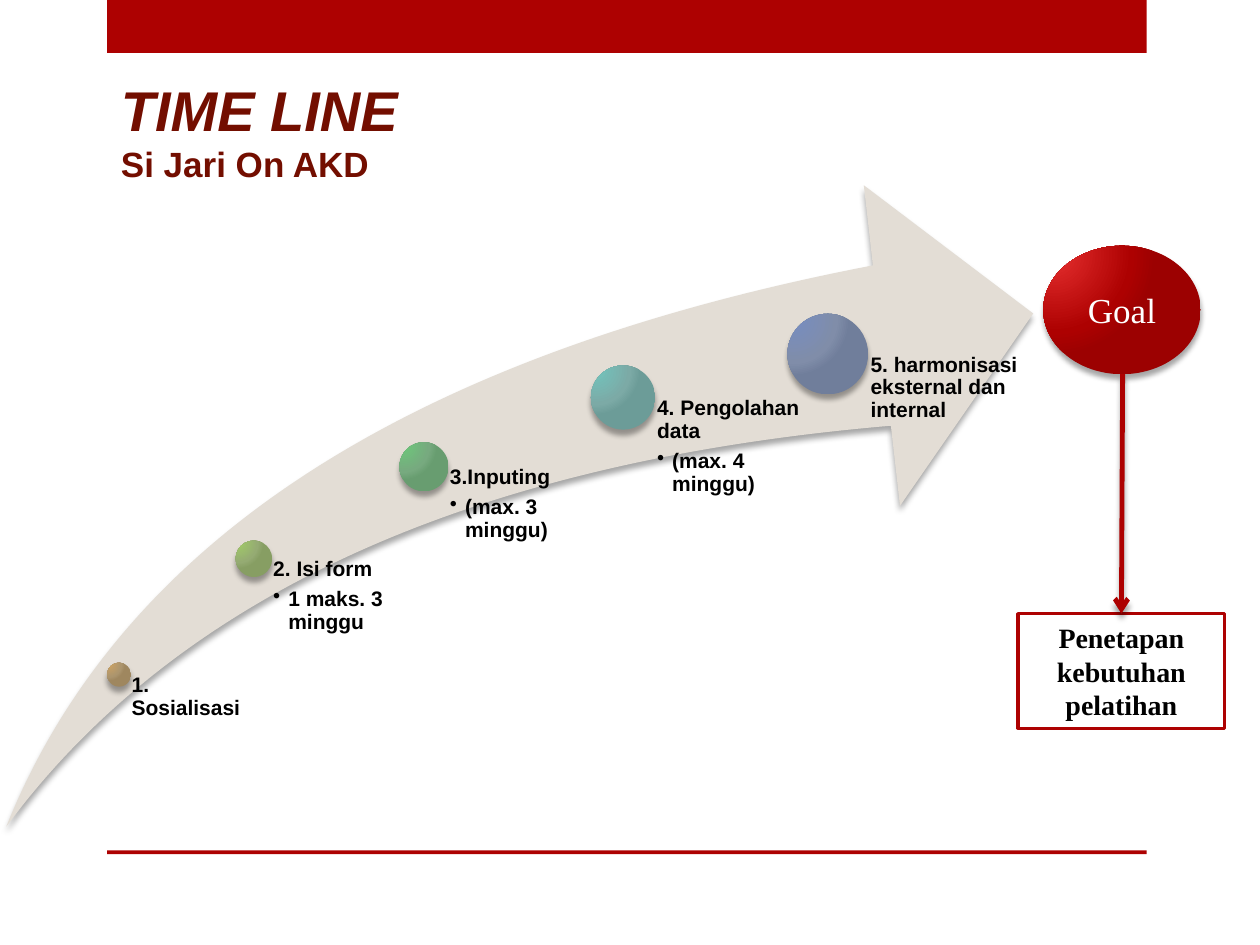
from lxml import etree
from pptx import Presentation
from pptx.dml.color import RGBColor
from pptx.enum.shapes import MSO_CONNECTOR as CONNECTOR, MSO_SHAPE as SHAPE
from pptx.enum.text import MSO_ANCHOR as ANCHOR, PP_ALIGN as ALIGN
from pptx.oxml import parse_xml
from pptx.oxml.ns import nsdecls, qn
from pptx.util import Inches, Pt

COLORS = {"red": "AD0101", "title": "730E00", "arrow": "E3DDD5",
          "black": "000000", "white": "FFFFFF"}
GOAL_GRADIENT = ("E62F2F", "AD0101", "9C0101")
LABEL_BOTTOM = 6.56

# Ball left, top, diameter, gradient; label width, heading, detail
STEPS = [
    (0.85, 5.26, 0.19, ("CEA363", "AC956E", "9F875F"), 1.07, "1. Sosialisasi", None),
    (1.87, 4.29, 0.29, ("A1CB68", "95AB73", "879E63"), 1.35, "2. Isi form", "1 maks. 3 minggu"),
    (3.17, 3.51, 0.39, ("6DC77A", "77AA7F", "689D70"), 1.57, "3.Inputing", "(max. 3 minggu)"),
    (4.69, 2.9, 0.51, ("72C4BD", "7CAAA6", "6C9C98"), 1.63, "4. Pengolahan data", "(max. 4 minggu)"),
    (6.25, 2.49, 0.64, ("778DC1", "808DA9", "707E9B"), 1.63,
     "5. harmonisasi eksternal dan internal", None),
]


class TimelineSlide:
    def __init__(self, presentation):
        self.slide = presentation.slides.add_slide(presentation.slide_layouts[5])

    def font(self, paragraph, size, color, name="Arial", bold=True, italic=False):
        font = paragraph.font
        font.name, font.size, font.bold, font.italic = name, Pt(size), bold, italic
        font.color.rgb = RGBColor.from_string(COLORS[color])

    def add_shadow(self, shape):
        properties = shape._element.spPr
        effects = properties.find(qn("a:effectLst"))
        if effects is None:
            effects = etree.SubElement(properties, qn("a:effectLst"))
        effects.append(parse_xml(
            f'<a:outerShdw {nsdecls("a")} blurRad="{Pt(3)}" dist="{Pt(3)}" dir="5400000" '
            f'rotWithShape="0"><a:srgbClr val="{COLORS["black"]}"><a:alpha val="35000"/>'
            '</a:srgbClr></a:outerShdw>'))

    def title(self, lines, left, top, width, height):
        title = self.slide.shapes.title
        title.left, title.top = Inches(left), Inches(top)
        title.width, title.height = Inches(width), Inches(height)
        frame = title.text_frame
        frame.text = "\n".join(text for text, _, _ in lines)
        frame.word_wrap = False
        frame.vertical_anchor = ANCHOR.TOP
        for paragraph, (_, size, italic) in zip(frame.paragraphs, lines):
            paragraph.alignment = ALIGN.LEFT
            self.font(paragraph, size, "title", italic=italic)

    def shape(self, kind, left, top, width, height, fill, line=None):
        shape = self.slide.shapes.add_shape(
            kind, Inches(left), Inches(top), Inches(width), Inches(height))
        shape.shadow.inherit = False
        shape.fill.solid()
        shape.fill.fore_color.rgb = RGBColor.from_string(COLORS[fill])
        if line:
            shape.line.color.rgb = RGBColor.from_string(COLORS[line])
            shape.line.width = Pt(1.75)
        else:
            shape.line.fill.background()
        return shape

    def ball(self, left, top, width, height, gradient):
        ball = self.shape(SHAPE.OVAL, left, top, width, height, "red")
        stops = "".join(f'<a:gs pos="{position}"><a:srgbClr val="{color}"/></a:gs>'
                        for position, color in zip((0, 76000, 100000), gradient))
        properties = ball._element.spPr
        properties.replace(properties.find(qn("a:solidFill")), parse_xml(
            f'<a:gradFill {nsdecls("a")} rotWithShape="1"><a:gsLst>{stops}</a:gsLst>'
            '<a:path path="circle"><a:fillToRect l="15000" t="15000" r="100000" b="100000"/>'
            '</a:path></a:gradFill>'))
        self.add_shadow(ball)
        return ball

    def caption(self, shape, text, size, color, bold):
        frame = shape.text_frame
        frame.text = text
        frame.word_wrap = True
        frame.vertical_anchor = ANCHOR.MIDDLE
        paragraph = frame.paragraphs[0]
        paragraph.alignment = ALIGN.CENTER
        self.font(paragraph, size, color, "Times New Roman", bold)

    def step(self, left, top, size, gradient, width, heading, detail):
        self.ball(left, top, size, size, gradient)
        # The label starts at the centre of its ball
        center_x, center_y = left + size / 2, top + size / 2
        label = self.slide.shapes.add_textbox(
            Inches(center_x), Inches(center_y), Inches(width), Inches(LABEL_BOTTOM - center_y))
        frame = label.text_frame
        frame.word_wrap = True
        frame.margin_left = Inches(0.53 * size)
        frame.margin_top = frame.margin_right = frame.margin_bottom = 0
        frame.text = f"{heading}\n{detail}" if detail else heading
        for paragraph, space in zip(frame.paragraphs, (4.2, 1.8)):
            paragraph.line_spacing = 0.9
            paragraph.space_after = Pt(space)
            self.font(paragraph, 12, "black")
        if detail:
            self.bullet(frame.paragraphs[1])

    def bullet(self, paragraph):
        paragraph.level = 1
        properties = paragraph._p.get_or_add_pPr()
        properties.set("marL", str(Inches(0.12)))
        properties.set("indent", str(Inches(-0.12)))
        bullet = parse_xml(f'<a:buChar {nsdecls("a")} char="•"/>')
        properties.insert_element_before(bullet, "a:tabLst", "a:defRPr", "a:extLst")

    def arrow(self, start_x, start_y, end_x, end_y):
        arrow = self.slide.shapes.add_connector(
            CONNECTOR.STRAIGHT, Inches(start_x), Inches(start_y), Inches(end_x), Inches(end_y))
        arrow.line.color.rgb = RGBColor.from_string(COLORS["red"])
        arrow.line.width = Pt(2.75)
        etree.SubElement(arrow.line._get_or_add_ln(), qn("a:tailEnd"), type="arrow")
        self.add_shadow(arrow)


def main():
    presentation = Presentation()
    presentation.slide_width, presentation.slide_height = Inches(10), Inches(7.5)
    timeline = TimelineSlide(presentation)

    # Frame bars and title
    for top, height in ((0, 0.42), (6.75, 0.03)):
        timeline.shape(SHAPE.RECTANGLE, 0.85, top, 8.25, height, "red")
    timeline.title([("TIME LINE", 32, True), ("Si Jari On AKD", 20, False)],
                   0.86, 0.55, 2.42, 0.98)

    # Rising arrow with its steps
    swoosh = timeline.shape(SHAPE.SWOOSH_ARROW, 0.05, 1.47, 8.15, 5.09, "arrow")
    swoosh.adjustments[0] = swoosh.adjustments[1] = 0.25
    timeline.add_shadow(swoosh)
    for step in STEPS:
        timeline.step(*step)

    # Goal and its result
    result = timeline.shape(SHAPE.RECTANGLE, 8.08, 4.87, 1.64, 0.91, "white", "red")
    timeline.caption(result, "Penetapan kebutuhan pelatihan", 16, "black", True)
    goal = timeline.ball(8.28, 1.95, 1.25, 1.02, GOAL_GRADIENT)
    timeline.caption(goal, "Goal", 20, "white", False)
    timeline.arrow(8.91, 2.97, 8.9, 4.87)

    presentation.save("out.pptx")


if __name__ == "__main__":
    main()
